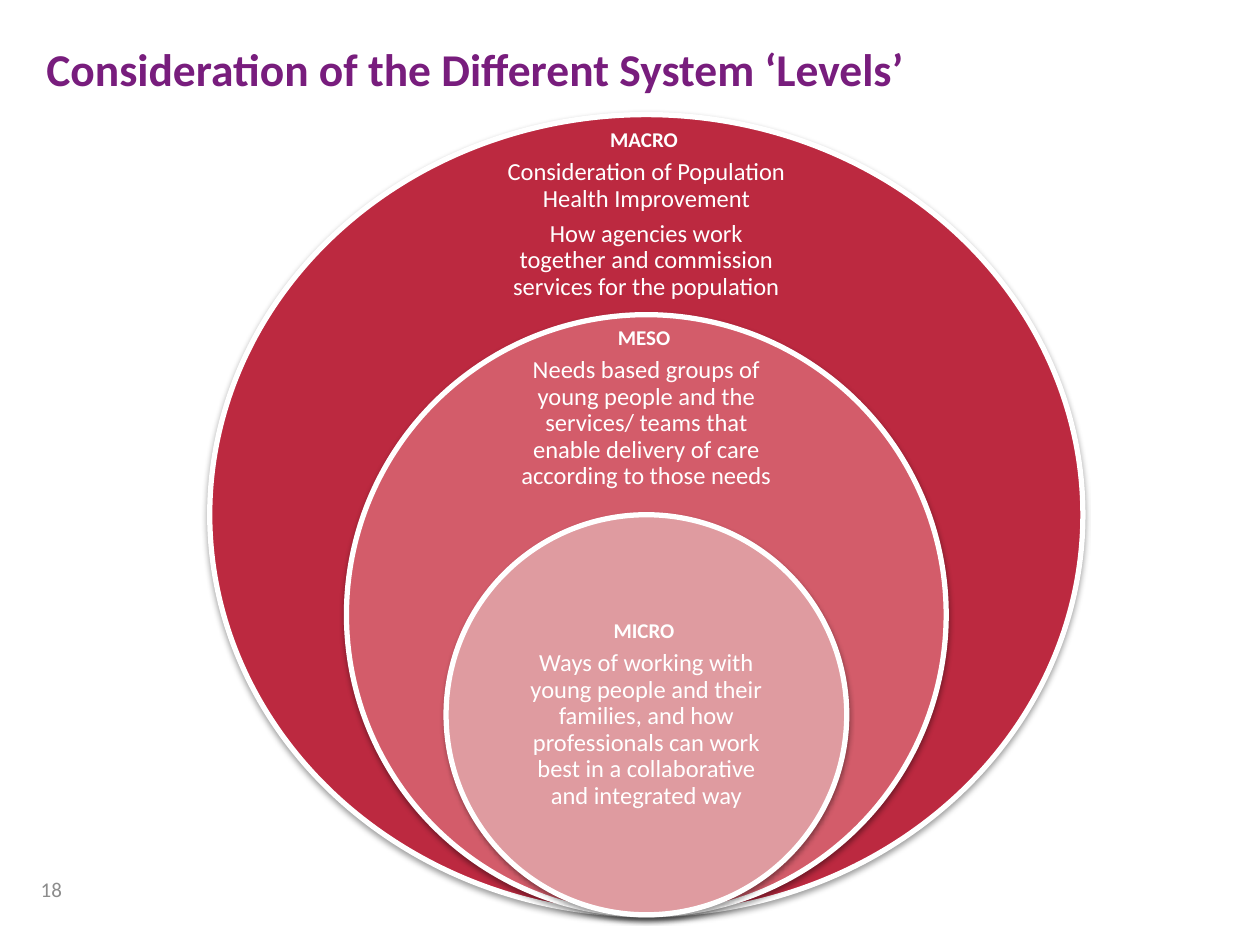
"""Build a slide of three nested system levels: macro, meso and micro."""
from lxml import etree
from pptx import Presentation, util as u
from pptx.dml.color import RGBColor
from pptx.enum import shapes, text
from pptx.oxml import ns, parse_xml

COLUMNS, ROWS = 100, 75
CENTRE, BOTTOM, OUTER_HEIGHT = 51.3, 72.6, 63.5
SHADOW = (
    f'<a:effectLst {ns.nsdecls("a")}>'
    '<a:outerShdw blurRad="39370" dist="20320" dir="5400000" rotWithShape="0">'
    '<a:srgbClr val="000000"><a:alpha val="38000"/></a:srgbClr>'
    '</a:outerShdw></a:effectLst>'
)
LEVELS = [
    ("BC2940", 69.3, 1, (24.2, 12.3, 9.5), [
        "MACRO ",
        "Consideration of Population Health Improvement",
        "How agencies work together and commission services for the population",
    ]),
    ("D35C6A", 47.6, 0.75, (22.2, 28, 8.9), [
        "MESO ",
        "Needs based groups of young people and the services/ teams that "
        "enable delivery of care according to those needs",
    ]),
    ("DF9BA0", 31.8, 0.5, (22.5, 48.8, 15.9), [
        "MICRO ",
        "Ways of working with young people and their families, and how "
        "professionals can work best in a collaborative and integrated way",
    ]),
]

presentation = Presentation()
presentation.slide_width, presentation.slide_height = u.Inches(10), u.Inches(7.5)
slide = presentation.slides.add_slide(presentation.slide_layouts[6])


def place(left, top, width, height):
    column = presentation.slide_width / COLUMNS
    row = presentation.slide_height / ROWS
    return [round(n * step) for n, step in
            zip((left, top, width, height), (column, row, column, row))]


def add_text(box, lines, sizes, color, bold, align, anchor, inset=None):
    shape = slide.shapes.add_textbox(*place(*box))
    frame = shape.text_frame
    frame.text = "\n".join(lines)
    frame.word_wrap = True
    frame.vertical_anchor = anchor
    if inset is not None:
        frame.margin_left = frame.margin_right = u.Inches(inset)
        frame.margin_top = frame.margin_bottom = u.Inches(inset)
    for index, paragraph in enumerate(frame.paragraphs):
        size = sizes[min(index, len(sizes) - 1)]
        paragraph.alignment = align
        if len(lines) > 1:
            paragraph.line_spacing = 0.9
            paragraph.space_after = u.Pt(round(size * 0.35, 1))
        font = paragraph.runs[0].font
        font.name, font.size = "Calibri", u.Pt(size)
        font.bold = bold and index == 0
        font.color.rgb = RGBColor.from_string(color)


add_text((1.2, 68.6, 4.7, 4), ["18"], [12], "8C8C8C", False,
         text.PP_ALIGN.RIGHT, text.MSO_ANCHOR.MIDDLE)
add_text((2.7, 2.8, 91.9, 6.3), ["Consideration of the Different System ‘Levels’"],
         [26], "781D7D", True, text.PP_ALIGN.LEFT, text.MSO_ANCHOR.TOP)

for color, width, share, (text_width, text_top, text_height), lines in LEVELS:
    height = OUTER_HEIGHT * share
    ellipse = slide.shapes.add_shape(
        shapes.MSO_SHAPE.OVAL,
        *place(CENTRE - width / 2, BOTTOM - height, width, height))
    ellipse.fill.solid()
    ellipse.fill.fore_color.rgb = RGBColor.from_string(color)
    ellipse.line.color.rgb = RGBColor.from_string("FFFFFF")
    ellipse.line.width = u.Pt(3)
    ellipse._element.spPr.append(parse_xml(SHADOW))
    add_text((CENTRE - text_width / 2, text_top, text_width, text_height), lines,
             [12, 14], "FFFFFF", True, text.PP_ALIGN.CENTER,
             text.MSO_ANCHOR.MIDDLE, 0.09)

presentation.save("out.pptx")
